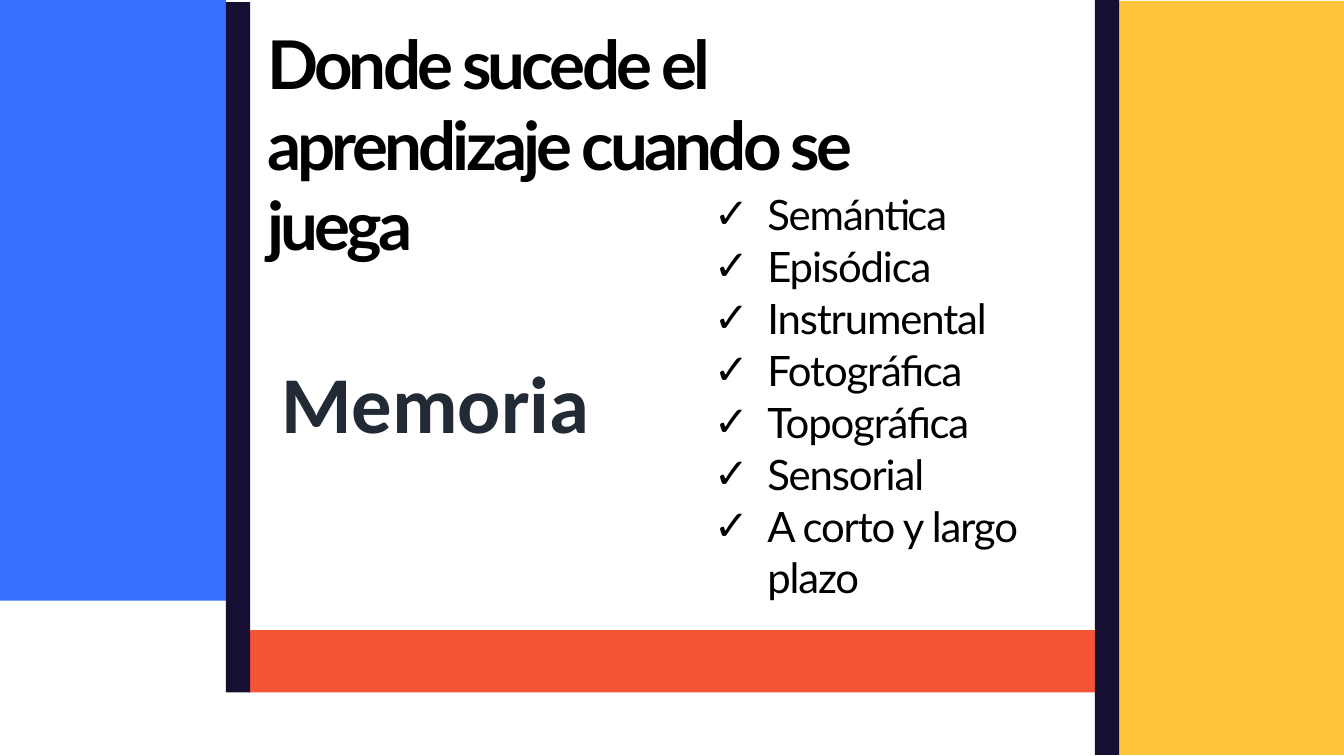
from lxml import etree
from pptx import Presentation
from pptx.dml.color import RGBColor
from pptx.enum.shapes import MSO_SHAPE
from pptx.enum.text import MSO_ANCHOR, MSO_AUTO_SIZE, PP_ALIGN
from pptx.oxml.ns import qn
from pptx.util import Inches, Pt

RECT = MSO_SHAPE.RECTANGLE
TOP = MSO_ANCHOR.TOP
FIXED = MSO_AUTO_SIZE.NONE
LEFT = PP_ALIGN.LEFT

BLACK = RGBColor(0x00, 0x00, 0x00)
SLATE = RGBColor(0x22, 0x2A, 0x35)
NAVY = RGBColor(0x16, 0x0F, 0x32)
BLUE = RGBColor(0x37, 0x72, 0xFF)
GOLD = RGBColor(0xFF, 0xC4, 0x3A)
CORAL = RGBColor(0xF5, 0x54, 0x36)


def write(shape, lines, place, size, font="Lato", color=BLACK, bold=False,
          track=0, inset=(0, 0), gap=0, mark=None):
    shape.left, shape.top, shape.width, shape.height = map(Inches, place)
    frame = shape.text_frame
    frame.text = "\n".join(lines)
    frame.word_wrap = True
    frame.auto_size = FIXED
    frame.vertical_anchor = TOP
    frame.margin_left = frame.margin_right = Inches(inset[0])
    frame.margin_top = Inches(inset[1])
    frame.margin_bottom = Inches(0)
    for i, para in enumerate(frame.paragraphs):
        para.alignment = LEFT
        para.space_before = Pt(gap if i else 0)
        if mark:
            props = para._p.get_or_add_pPr()
            props.set("marL", str(Inches(0.55)))
            props.set("indent", str(Inches(-0.53)))
            etree.SubElement(props, qn("a:buChar")).set("char", mark)
        run = para.runs[0]
        run.font.name = font
        run.font.size = Pt(size)
        run.font.bold = bold
        run.font.color.rgb = color
        run._r.get_or_add_rPr().set("spc", str(track))


deck = Presentation()
deck.slide_width = Inches(13.33)
deck.slide_height = Inches(7.5)
slide = deck.slides.add_slide(deck.slide_layouts[1])
shapes = slide.shapes

bands = [
    (CORAL, 2.47, 6.25, 8.39, 0.62),
    (BLUE, 0, 0, 2.24, 5.96),
    (NAVY, 2.24, 0.02, 0.24, 6.85),
    (GOLD, 11.1, 0.01, 2.23, 7.48),
    (NAVY, 10.86, 0, 0.24, 7.49),
]
for color, *place in bands:
    band = shapes.add_shape(RECT, *map(Inches, place))
    band.shadow.inherit = False
    band.fill.solid()
    band.fill.fore_color.rgb = color
    band.line.fill.background()

write(shapes.title, ["Donde sucede el aprendizaje cuando se juega"],
      (2.65, 0.19, 7.27, 2.44), 48, bold=True, track=-270, inset=(0, 0.03))

kinds = ["Semántica", "Episódica", "Instrumental", "Fotográfica",
         "Topográfica", "Sensorial", "A corto y largo plazo"]
write(slide.placeholders[1], kinds, (7.06, 1.83, 3.61, 4.12), 29.9,
      track=-80, inset=(0, 0.04), gap=1.3, mark="✓")

place = (2.69, 3.45, 3.52, 1.07)
label = shapes.add_textbox(*map(Inches, place))
write(label, ["Memoria"], place, 57.6, font="Calibri", color=SLATE,
      bold=True, inset=(0.1, 0.05))

deck.save("out.pptx")
